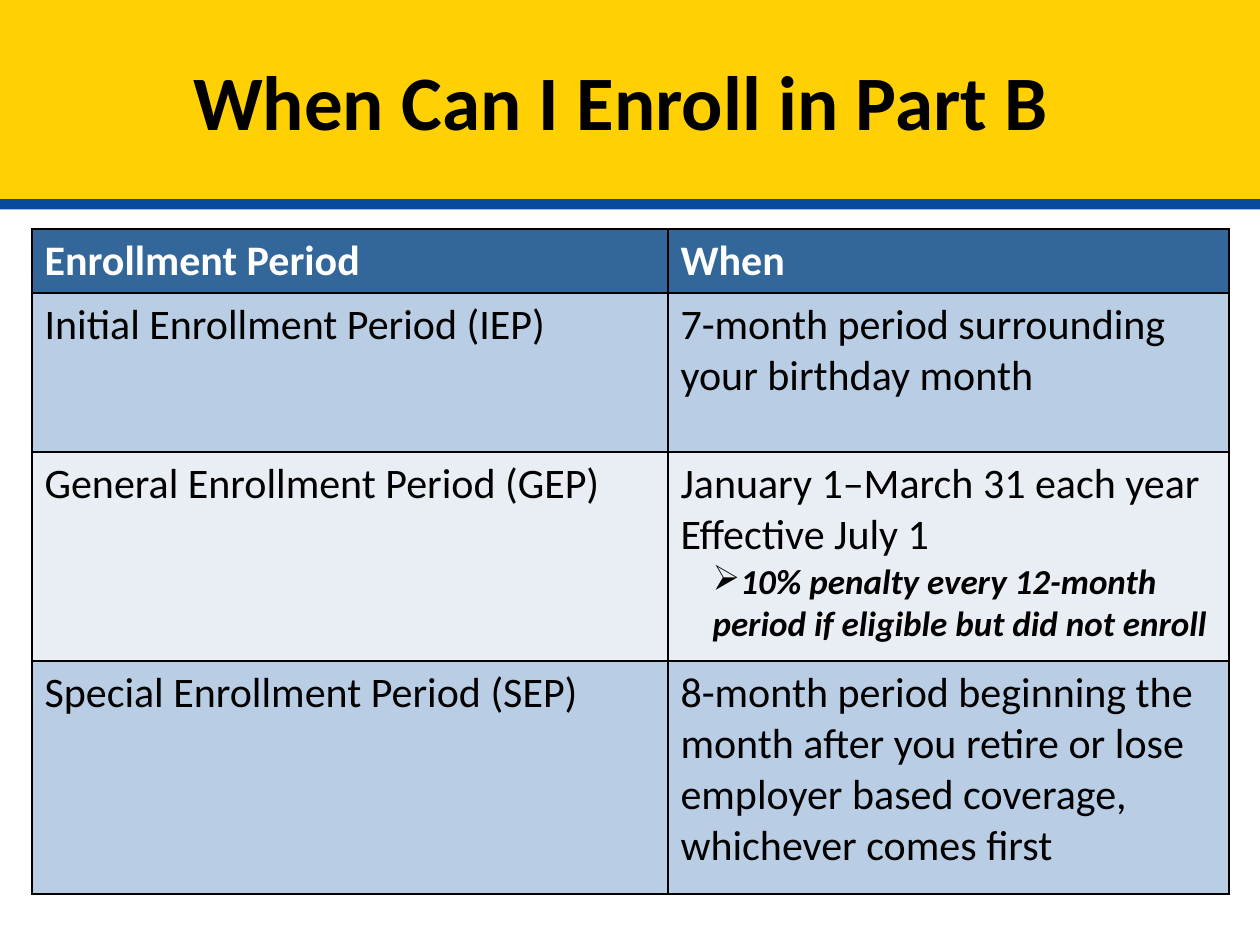
from lxml import etree
from pptx import Presentation
from pptx.dml.color import RGBColor
from pptx.enum.text import MSO_ANCHOR, PP_ALIGN
from pptx.oxml import parse_xml
from pptx.oxml.ns import nsdecls, qn
from pptx.util import Pt

CENTER = PP_ALIGN.CENTER
MIDDLE = MSO_ANCHOR.MIDDLE
BLACK = RGBColor(0x00, 0x00, 0x00)
WHITE = RGBColor(0xFF, 0xFF, 0xFF)
YELLOW = RGBColor(0xFF, 0xD0, 0x04)
BLUE = RGBColor(0x08, 0x4A, 0x9C)
HEADER = RGBColor(0x33, 0x66, 0x99)
BAND = RGBColor(0xB9, 0xCD, 0xE5)
PALE = RGBColor(0xE9, 0xED, 0xF4)
FONT = "Calibri"

COL_WIDTHS = [636, 561]
ROW_HEIGHTS = [60, 159, 209, 233]
ROW_FILLS = [HEADER, BAND, PALE, BAND]
PERIODS = [
    ("Enrollment Period", "When"),
    ("Initial Enrollment Period (IEP)",
     "7-month period surrounding your birthday month"),
    ("General Enrollment Period (GEP)",
     "January 1–March 31 each year Effective July 1"),
    ("Special Enrollment Period (SEP)",
     "8-month period beginning the month after you retire or lose "
     "employer based coverage, whichever comes first"),
]
PENALTY = "10% penalty every 12-month period if eligible but did not enroll"


def px(n):
    return round(n * 914400 / 126)


def format_runs(p, size, color, bold=False, italic=False):
    for r in p.runs:
        r.font.name = FONT
        r.font.size = Pt(size)
        r.font.color.rgb = color
        r.font.bold = bold
        r.font.italic = italic


def add_bottom_shadow(sp, color, distance):
    sp._element.spPr.append(parse_xml(
        f'<a:effectLst {nsdecls("a")}>'
        f'<a:outerShdw blurRad="0" dist="{distance}" dir="5400000" '
        f'algn="t" rotWithShape="0"><a:srgbClr val="{color}"/>'
        '</a:outerShdw></a:effectLst>'))


def add_title(s, x, y, w, h):
    sp = s.shapes.title
    sp.left, sp.top, sp.width, sp.height = px(x), px(y), px(w), px(h)
    sp.fill.solid()
    sp.fill.fore_color.rgb = YELLOW
    sp.line.fill.background()
    add_bottom_shadow(sp, BLUE, Pt(6))
    tf = sp.text_frame
    tf.vertical_anchor = MIDDLE
    tf.text = "When Can I Enroll in Part B "
    p = tf.paragraphs[0]
    p.alignment = CENTER
    format_runs(p, 44, BLACK, bold=True)


def set_borders(cell):
    tcPr = cell._tc.get_or_add_tcPr()
    for i, side in enumerate(("lnL", "lnR", "lnT", "lnB")):
        tcPr.insert(i, parse_xml(
            f'<a:{side} {nsdecls("a")} w="{Pt(1)}"><a:solidFill>'
            f'<a:srgbClr val="{BLACK}"/></a:solidFill></a:{side}>'))


def add_bullet(p, char, indent):
    pPr = p._p.get_or_add_pPr()
    pPr.set("marL", str(indent))
    pPr.set("indent", "0")
    etree.SubElement(pPr, qn("a:buChar")).set("char", char)


def add_periods_table(s, x, y):
    tbl = s.shapes.add_table(
        len(ROW_HEIGHTS), len(COL_WIDTHS), px(x), px(y),
        px(sum(COL_WIDTHS)), px(sum(ROW_HEIGHTS))).table
    for col, w in zip(tbl.columns, COL_WIDTHS):
        col.width = px(w)
    for i, (row, h) in enumerate(zip(tbl.rows, ROW_HEIGHTS)):
        row.height = px(h)
        for cell, text in zip(row.cells, PERIODS[i]):
            cell.fill.solid()
            cell.fill.fore_color.rgb = ROW_FILLS[i]
            set_borders(cell)
            cell.text_frame.text = text
            format_runs(cell.text_frame.paragraphs[0], 24,
                        WHITE if i == 0 else BLACK, bold=i == 0)
    p = tbl.cell(2, 1).text_frame.add_paragraph()
    p.text = PENALTY
    add_bullet(p, "➢", px(32))
    format_runs(p, 20, BLACK, bold=True, italic=True)


def main():
    prs = Presentation()
    prs.slide_width, prs.slide_height = px(1260), px(945)
    s = prs.slides.add_slide(prs.slide_layouts[5])
    add_title(s, 0, 0, 1260, 199)
    add_periods_table(s, 32, 229)
    prs.save("out.pptx")


if __name__ == "__main__":
    main()
